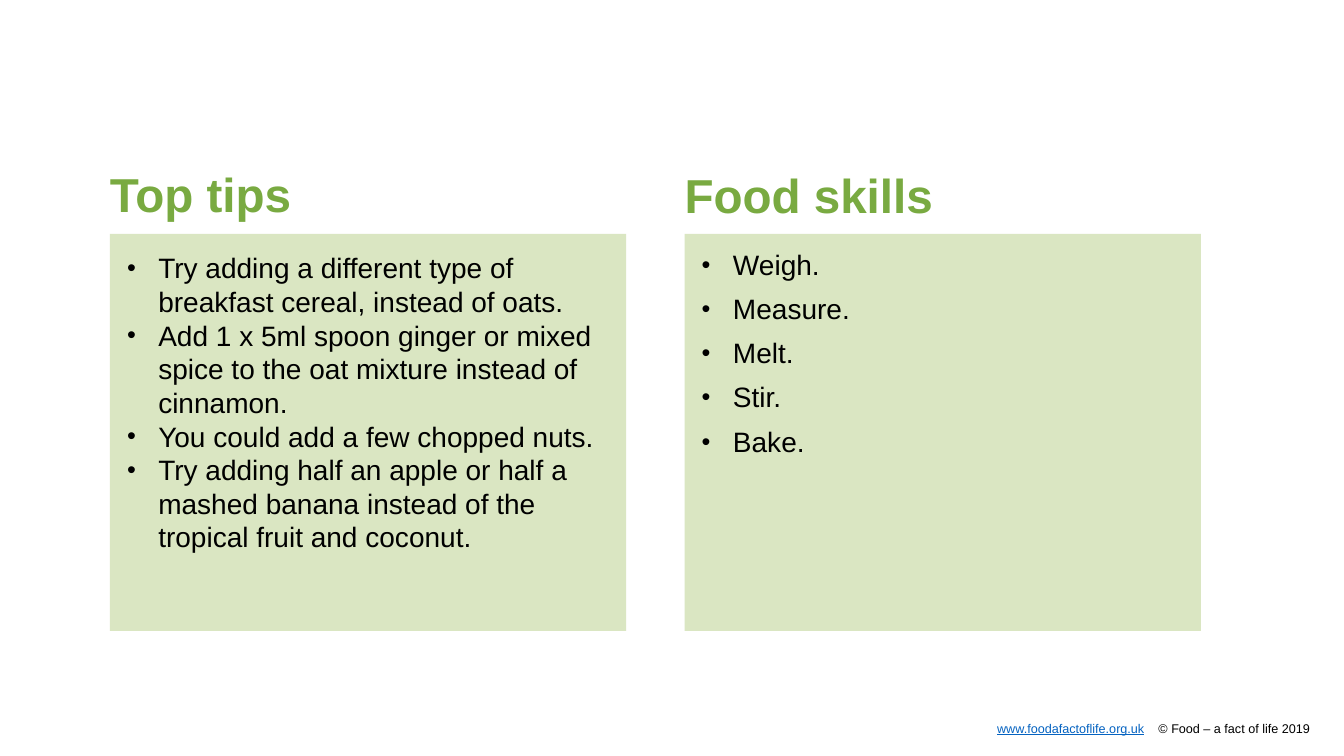
from dataclasses import dataclass

from lxml.etree import SubElement
from pptx import Presentation
from pptx.dml.color import RGBColor
from pptx.enum.shapes import MSO_SHAPE
from pptx.oxml.ns import qn
from pptx.util import Pt

EMU_PER_PX = 9144


def px(length):
    return length * EMU_PER_PX


@dataclass(frozen=True)
class Theme:
    font: str = "Arial"
    heading: str = "79AA41"
    panel: str = "DAE6C2"
    body: str = "000000"
    link: str = "0563C1"
    heading_size: int = 34
    body_size: int = 20
    footer_size: int = 9


class SlideBuilder:
    def __init__(self, slide, theme):
        self.slide = slide
        self.theme = theme

    def panel(self, left, top, width, height):
        shape = self.slide.shapes.add_shape(
            MSO_SHAPE.RECTANGLE, px(left), px(top), px(width), px(height))
        shape.shadow.inherit = False
        shape.fill.solid()
        shape.fill.fore_color.rgb = RGBColor.from_string(self.theme.panel)
        shape.line.fill.background()

    def text_frame(self, left, top, width, height):
        box = self.slide.shapes.add_textbox(px(left), px(top), px(width), px(height))
        frame = box.text_frame
        margins = dict.fromkeys(
            ("margin_left", "margin_top", "margin_right", "margin_bottom"), 0)
        for name, value in {"word_wrap": True, **margins}.items():
            setattr(frame, name, value)
        return frame

    def span(self, para, text, size, color, **formats):
        span = para.add_run()
        span.text = text
        for name, value in {"name": self.theme.font, "size": Pt(size), **formats}.items():
            setattr(span.font, name, value)
        span.font.color.rgb = RGBColor.from_string(color)

    def heading(self, text, left, top, width, height):
        para = self.text_frame(left, top, width, height).paragraphs[0]
        para.line_spacing = 0.9
        self.span(para, text, self.theme.heading_size, self.theme.heading, bold=True)

    def bullets(self, items, left, top, width, height, line_spacing, gap):
        frame = self.text_frame(left, top, width, height)
        for index, item in enumerate(items):
            para = frame.add_paragraph() if index else frame.paragraphs[0]
            para.line_spacing = line_spacing
            para.space_before = Pt(gap if index else 0)
            properties = para._p.get_or_add_pPr()
            properties.set("marL", str(px(31)))
            properties.set("indent", str(-px(31)))
            SubElement(properties, qn("a:buSzPct"), val="90000")
            SubElement(properties, qn("a:buFont"), typeface=self.theme.font)
            SubElement(properties, qn("a:buChar"), char="•")
            self.span(para, item, self.theme.body_size, self.theme.body)

    def footer(self, address, copyright_line, left, top, width, height, tab):
        """Web address, then the copyright line at a tab stop."""
        para = self.text_frame(left, top, width, height).paragraphs[0]
        tabs = SubElement(para._p.get_or_add_pPr(), qn("a:tabLst"))
        SubElement(tabs, qn("a:tab"), pos=str(px(tab)), algn="l")
        size = self.theme.footer_size
        self.span(para, address, size, self.theme.link, underline=True)
        self.span(para, "\t" + copyright_line, size, self.theme.body)


COLUMNS = [
    # left, heading, heading top, line spacing, gap, items
    (109, "Top tips", 170, 1.0, 0, [
        "Try adding a different type of breakfast cereal, instead of oats.",
        "Add 1 x 5ml spoon ginger or mixed spice to the oat mixture instead of cinnamon.",
        "You could add a few chopped nuts.",
        "Try adding half an apple or half a mashed banana instead of the "
        "tropical fruit and coconut.",
    ]),
    (679, "Food skills", 171, 0.9, 10, ["Weigh.", "Measure.", "Melt.", "Stir.", "Bake."]),
]


def main():
    deck = Presentation()
    deck.slide_width, deck.slide_height = px(1333), px(750)
    page = SlideBuilder(deck.slides.add_slide(deck.slide_layouts[6]), Theme())
    page.footer("www.foodafactoflife.org.uk", "© Food – a fact of life 2019",
                989, 715, 320, 15, tab=160)
    for left, heading, heading_top, line_spacing, gap, items in COLUMNS:
        page.panel(left, 232, 512, 394)
        page.heading(heading, left, heading_top, 512, 79)
        page.bullets(items, left + 17, 249, 478, 394, line_spacing, gap)
    deck.save("out.pptx")


if __name__ == "__main__":
    main()
